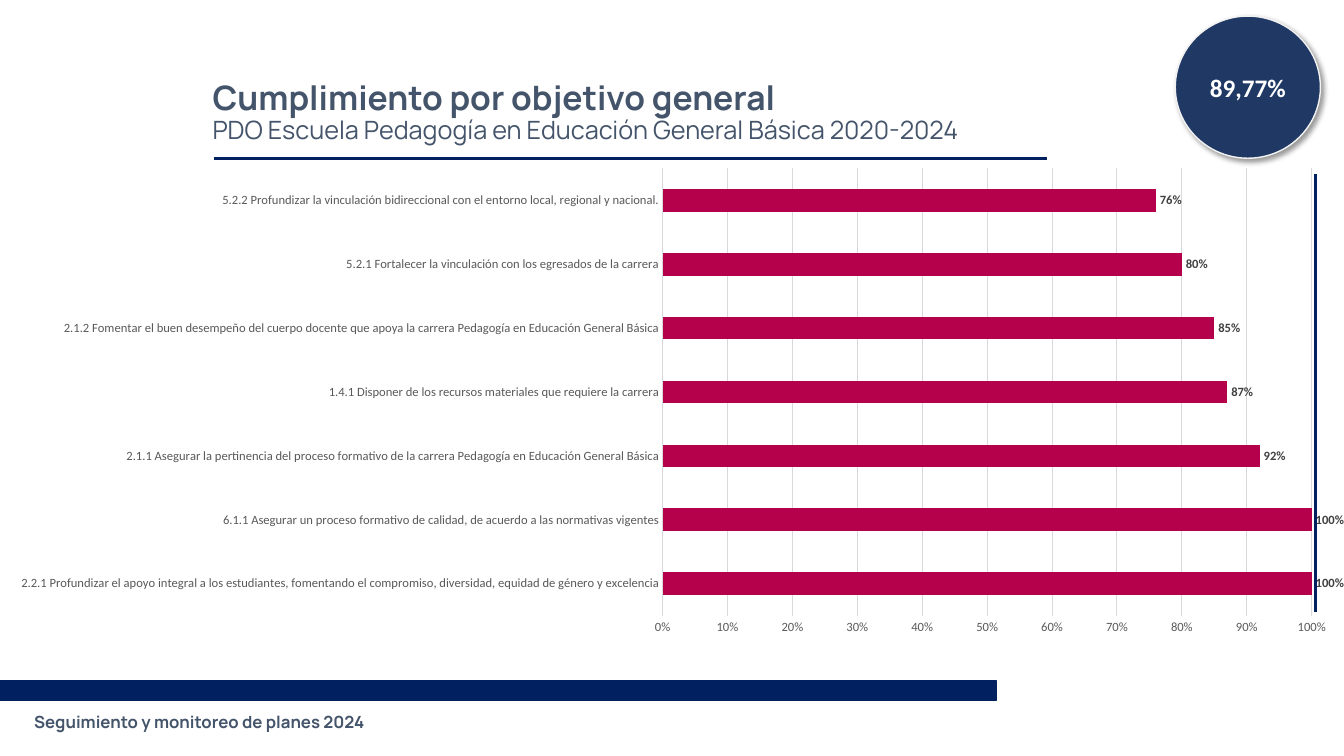
"""Builds the slide on compliance by general objective."""
import dataclasses
import typing

import lxml.etree
import pptx
import pptx.chart.data
import pptx.dml.color
import pptx.enum.chart
import pptx.enum.shapes
import pptx.enum.text
import pptx.oxml
import pptx.oxml.ns
import pptx.util

Pt = pptx.util.Pt
NAVY, SLATE, WHITE, CRIMSON = "002060", "44546A", "FFFFFF", "B5004B"
GRID, AXIS_TEXT, LABEL_TEXT = "D9D9D9", "595959", "404040"
TITLE_FONT, CHART_FONT = "Manrope", "Calibri"


@dataclasses.dataclass(frozen=True)
class Panel:
    """A filled preset shape."""
    kind: pptx.enum.shapes.MSO_SHAPE
    left: float
    top: float
    width: float
    height: float
    fill: str
    line: str | None = None


@dataclasses.dataclass(frozen=True)
class Rule:
    """A straight navy line."""
    x1: float
    y1: float
    x2: float
    y2: float


@dataclasses.dataclass(frozen=True)
class Objective:
    """A general objective and its compliance."""
    name: str
    share: float


FOOTER_BAR = Panel(pptx.enum.shapes.MSO_SHAPE.RECTANGLE, 0, 486, 711.5, 14.5, NAVY, NAVY)
FOOTER_LABEL = Panel(pptx.enum.shapes.MSO_SHAPE.RECTANGLE, 17.3, 502, 293, 27.4, WHITE)
TOTAL_BADGE = Panel(pptx.enum.shapes.MSO_SHAPE.OVAL, 839.5, 11.5, 103.7, 101.5, "203864", "F2F2F2")
TITLE_RULE = Rule(152.6, 113, 748, 113)
CHART_RULE = Rule(939.6, 124, 939.6, 437)

OBJECTIVES = [
    Objective("2.2.1 Profundizar el apoyo integral a los estudiantes, fomentando el compromiso, "
              "diversidad, equidad de género y excelencia", 1),
    Objective("6.1.1 Asegurar un proceso formativo de calidad, de acuerdo a las normativas vigentes", 1),
    Objective("2.1.1 Asegurar la pertinencia del proceso formativo de la carrera Pedagogía en "
              "Educación General Básica", 0.92),
    Objective("1.4.1 Disponer de los recursos materiales que requiere la carrera", 0.87),
    Objective("2.1.2 Fomentar el buen desempeño del cuerpo docente que apoya la carrera Pedagogía en "
              "Educación General Básica", 0.85),
    Objective("5.2.1 Fortalecer la vinculación con los egresados de la carrera", 0.8),
    Objective("5.2.2 Profundizar la vinculación bidireccional con el entorno local, regional y nacional.",
              0.76),
]


def color(value: str) -> pptx.dml.color.RGBColor:
    """Turns a hex string into a colour."""
    return pptx.dml.color.RGBColor.from_string(value)


def style_font(font: typing.Any, *, name: str, size: float, tint: str, bold: bool = False) -> None:
    """Sets the face, size, colour and weight of a font."""
    font.name, font.size, font.bold = name, Pt(size), bold
    font.color.rgb = color(tint)


def write(box: typing.Any, text: str, *, size: float, tint: str, name: str = TITLE_FONT,
          bold: bool = False, align: str = "LEFT", spacing: float = 1.0) -> None:
    """Adds a formatted paragraph to a shape, using the empty first one if present."""
    frame = box.text_frame
    frame.word_wrap = True
    frame.vertical_anchor = pptx.enum.text.MSO_ANCHOR.MIDDLE
    para = frame.add_paragraph() if frame.text else frame.paragraphs[0]
    para.alignment = pptx.enum.text.PP_ALIGN[align]
    para.line_spacing = spacing
    span = para.add_run()
    span.text = text
    style_font(span.font, name=name, size=size, tint=tint, bold=bold)


def draw_panel(page: typing.Any, panel: Panel) -> typing.Any:
    """Draws a filled shape without shadow."""
    shape = page.shapes.add_shape(panel.kind, Pt(panel.left), Pt(panel.top),
                                  Pt(panel.width), Pt(panel.height))
    shape.fill.solid()
    shape.fill.fore_color.rgb = color(panel.fill)
    if panel.line:
        shape.line.color.rgb = color(panel.line)
        shape.line.width = Pt(1)
    else:
        shape.line.fill.background()
    shape.shadow.inherit = False
    return shape


def add_shadow(shape: typing.Any) -> None:
    """Gives a shape a soft shadow towards the lower right."""
    effects = shape._element.spPr.find(pptx.oxml.ns.qn("a:effectLst"))
    effects.append(pptx.oxml.parse_xml(
        f'<a:outerShdw {pptx.oxml.ns.nsdecls("a")} blurRad="{Pt(4)}" dist="{Pt(3)}" dir="2700000" '
        'algn="tl" rotWithShape="0"><a:srgbClr val="000000"><a:alpha val="40000"/></a:srgbClr>'
        '</a:outerShdw>'))


def draw_rule(page: typing.Any, rule: Rule) -> None:
    """Draws a straight line without shadow."""
    line = page.shapes.add_connector(pptx.enum.shapes.MSO_CONNECTOR.STRAIGHT,
                                     Pt(rule.x1), Pt(rule.y1), Pt(rule.x2), Pt(rule.y2))
    line.line.color.rgb = color(NAVY)
    line.line.width = Pt(2.25)
    lxml.etree.SubElement(line._element.spPr, pptx.oxml.ns.qn("a:effectLst"))


def place_plot(chart: typing.Any, **fractions: float) -> None:
    """Fixes the inner plot area as fractions of the chart."""
    area = chart._chartSpace.chart.plotArea
    for old in area.findall(pptx.oxml.ns.qn("c:layout")):
        area.remove(old)
    settings = {"layoutTarget": "inner", "xMode": "edge", "yMode": "edge", **fractions}
    marks = "".join(f'<c:{key} val="{value}"/>' for key, value in settings.items())
    area.insert(0, pptx.oxml.parse_xml(
        f'<c:layout {pptx.oxml.ns.nsdecls("c")}><c:manualLayout>{marks}</c:manualLayout></c:layout>'))


def draw_chart(page: typing.Any, objectives: list[Objective]) -> None:
    """Draws the bar chart of compliance by objective."""
    data = pptx.chart.data.CategoryChartData(number_format="0%")
    data.categories = [objective.name for objective in objectives]
    data.add_series("Series 1", [objective.share for objective in objectives])
    chart = page.shapes.add_chart(pptx.enum.chart.XL_CHART_TYPE.BAR_CLUSTERED,
                                  Pt(0), Pt(113), Pt(960), Pt(351.4), data).chart
    chart.has_legend = chart.has_title = False
    style_font(chart.font, name=CHART_FONT, size=10, tint="000000")
    place_plot(chart, x=0.495, y=0.021, w=0.485, h=0.909)

    for axis in (chart.category_axis, chart.value_axis):
        axis.major_tick_mark = axis.minor_tick_mark = pptx.enum.chart.XL_TICK_MARK.NONE
        style_font(axis.tick_labels.font, name=CHART_FONT, size=9, tint=AXIS_TEXT)
    values = chart.value_axis
    values.minimum_scale, values.maximum_scale, values.major_unit = 0, 1, 0.1
    values.tick_labels.number_format = "0%"
    values.tick_labels.number_format_is_linked = False
    values.format.line.fill.background()
    for line in (chart.category_axis.format.line, values.major_gridlines.format.line):
        line.color.rgb = color(GRID)
        line.width = Pt(0.75)

    plot = chart.plots[0]
    plot.gap_width, plot.vary_by_categories = 182, False
    bars = plot.series[0]
    bars.format.fill.solid()
    bars.format.fill.fore_color.rgb = color(CRIMSON)
    labels = bars.data_labels
    labels.show_value = True
    labels.position = pptx.enum.chart.XL_LABEL_POSITION.OUTSIDE_END
    labels.number_format, labels.number_format_is_linked = "0%", False
    style_font(labels.font, name=CHART_FONT, size=9, tint=LABEL_TEXT, bold=True)


def main() -> None:
    """Builds and saves the deck."""
    deck = pptx.Presentation()
    deck.slide_width, deck.slide_height = Pt(960), Pt(540)
    page = deck.slides.add_slide(deck.slide_layouts[6])

    draw_panel(page, FOOTER_BAR)
    write(draw_panel(page, FOOTER_LABEL), "Seguimiento y monitoreo de planes 2024",
          size=12, tint=SLATE, bold=True)
    draw_rule(page, TITLE_RULE)
    title = page.shapes.add_textbox(Pt(144.7), Pt(28.8), Pt(749.5), Pt(104.4))
    write(title, "Cumplimiento por objetivo general", size=24, tint=SLATE, bold=True, spacing=0.9)
    write(title, "PDO Escuela Pedagogía en Educación General Básica 2020-2024",
          size=18, tint=SLATE, spacing=0.9)
    draw_chart(page, OBJECTIVES)
    draw_rule(page, CHART_RULE)
    badge = draw_panel(page, TOTAL_BADGE)
    add_shadow(badge)
    write(badge, "89,77%", size=18, tint=WHITE, name=CHART_FONT, bold=True, align="CENTER")

    deck.save("out.pptx")


if __name__ == "__main__":
    main()
